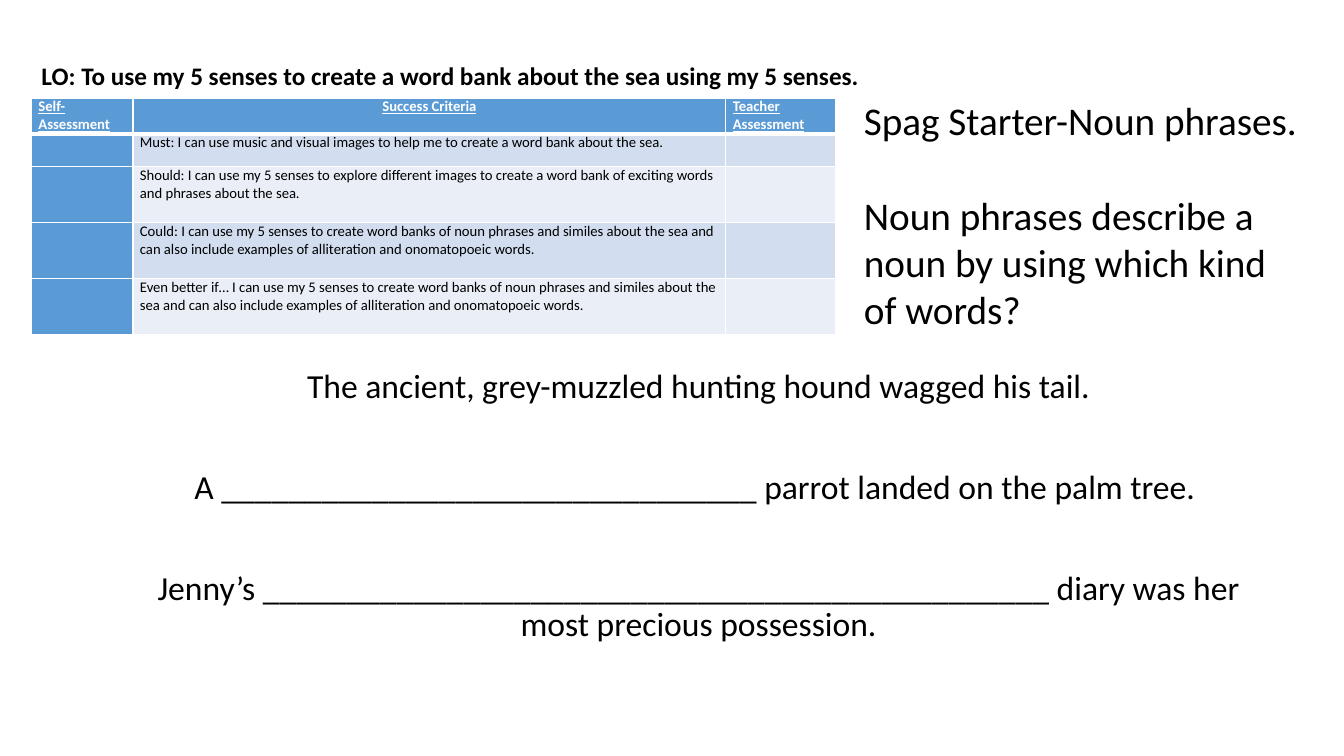
"""Build a lesson slide with a success criteria table and noun phrase sentences."""
from lxml import etree
from pptx import Presentation
from pptx.dml.color import RGBColor
from pptx.enum.text import PP_ALIGN
from pptx.oxml.ns import qn
from pptx.util import Pt

LEFT, CENTER = PP_ALIGN.LEFT, PP_ALIGN.CENTER
BLUE, PALE, PALER = "5B9BD5", "D2DEEF", "EAEFF7"
BLACK, WHITE = "000000", "FFFFFF"


def color(value):
    return RGBColor.from_string(value)


def write(para, text, size, ink=BLACK, bold=False, underline=False, align=LEFT):
    para.alignment = align
    span = para.add_run()
    span.text = text
    span.font.name = "Calibri"
    span.font.size = Pt(size)
    span.font.bold = bold
    span.font.underline = underline
    span.font.color.rgb = color(ink)


deck = Presentation()
deck.slide_width, deck.slide_height = Pt(960), Pt(540)
page = deck.slides.add_slide(deck.slide_layouts[6])

headings = ["Self- Assessment", "Success Criteria", "Teacher Assessment"]
criteria = [
    "Must: I can use music and visual images to help me to create a word bank about the sea.",
    "Should: I can use my 5 senses to explore different images to create a word bank of "
    "exciting words and phrases about the sea.",
    "Could: I can use my 5 senses to create word banks of noun phrases and similes about "
    "the sea and can also include examples of alliteration and onomatopoeic words.",
    "Even better if… I can use my 5 senses to create word banks of noun phrases and similes "
    "about the sea and can also include examples of alliteration and onomatopoeic words.",
]
rows = [headings] + [["", criterion, ""] for criterion in criteria]
widths = [72.5, 423.5, 78.5]
heights = [25, 23.5, 40, 40, 40]

table = page.shapes.add_table(
    len(rows), len(widths), Pt(22.5), Pt(70), Pt(sum(widths)), Pt(sum(heights))
).table
for column, width in zip(table.columns, widths):
    column.width = Pt(width)
for row, height in zip(table.rows, heights):
    row.height = Pt(height)

for r, texts in enumerate(rows):
    header = r == 0
    for c, text in enumerate(texts):
        cell = table.cell(r, c)
        cell.margin_left = cell.margin_right = Pt(5)
        cell.margin_top = cell.margin_bottom = 0
        edges = {"lnL": 1, "lnR": 1, "lnT": 3 if r == 1 else 1, "lnB": 3 if header else 1}
        properties = cell._tc.get_or_add_tcPr()
        for edge, weight in edges.items():
            line = etree.SubElement(properties, qn(f"a:{edge}"), w=str(Pt(weight)))
            fill = etree.SubElement(line, qn("a:solidFill"))
            etree.SubElement(fill, qn("a:srgbClr"), val=WHITE)
        cell.fill.solid()
        body_fill = PALE if r % 2 else PALER
        cell.fill.fore_color.rgb = color(BLUE if header or c == 0 else body_fill)
        if text:
            write(cell.text_frame.paragraphs[0], text, 10.5, WHITE if header else BLACK,
                  header, header, CENTER if header and c == 1 else LEFT)

objective = ["LO: To use my 5 senses to create a word bank about the sea using my 5 senses."]
starter = [
    "Spag Starter-Noun phrases.",
    "Noun phrases describe a noun by using which kind of words?",
]
sentences = [
    "The ancient, grey-muzzled hunting hound wagged his tail.",
    "A " + "_" * 32 + " parrot landed on the palm tree. ",
    "Jenny’s " + "_" * 47 + " diary was her most precious possession.",
]
blocks = [
    (sentences, (96.5, 260.5, 805, 237), 24, False, CENTER, 0.9, 46),
    (starter, (610, 65.5, 325.5, 177), 28, False, LEFT, 1, 34),
    (objective, (22.5, 39.5, 603.5, 29), 18, True, LEFT, 1, 0),
]
for texts, place, size, bold, align, spacing, gap in blocks:
    frame = page.shapes.add_textbox(*map(Pt, place)).text_frame
    frame.word_wrap = True
    for i, text in enumerate(texts):
        para = frame.add_paragraph() if i else frame.paragraphs[0]
        para.line_spacing = spacing
        para.space_before = Pt(gap if i else 0)
        write(para, text, size, bold=bold, align=align)

deck.save("out.pptx")
